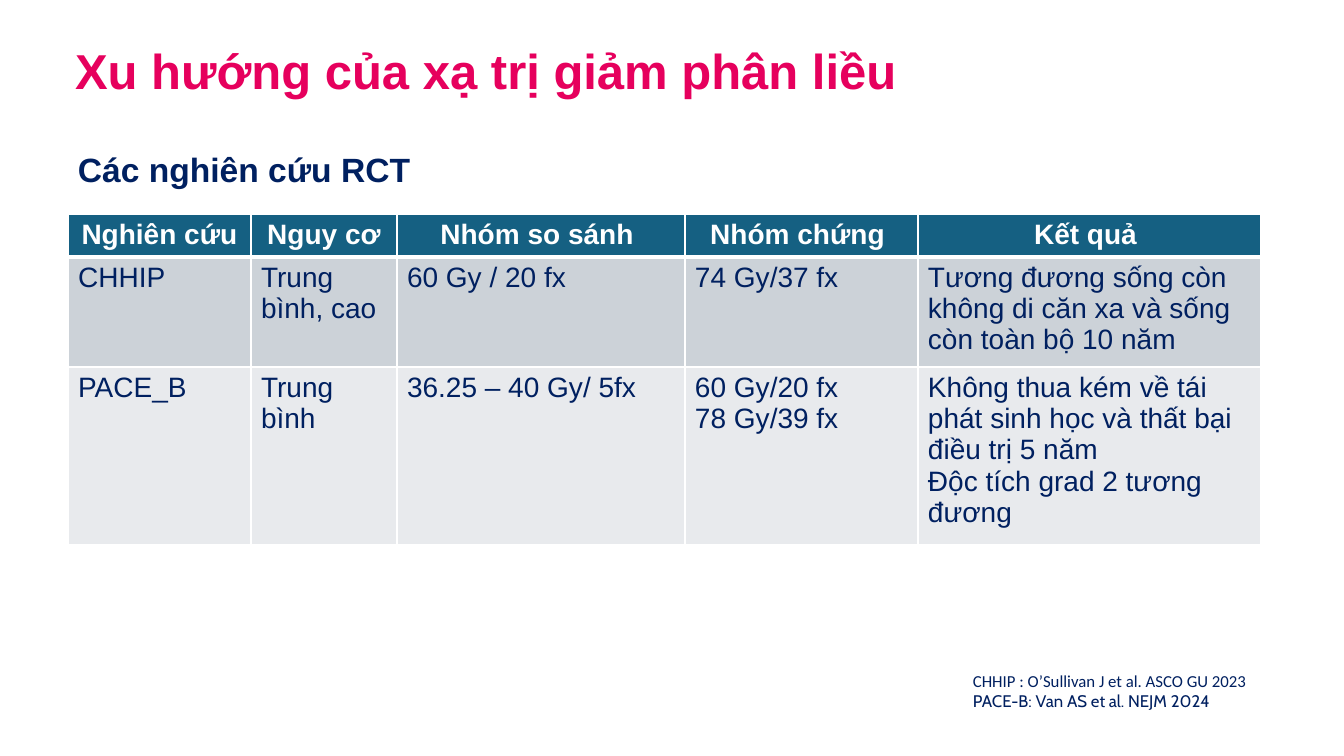
import pptx
import pptx.util
import pptx.dml.color
import pptx.enum.text
import pptx.oxml.ns
import lxml.etree

PX = 914400 / 100.8
HEX = {"pink": "E6005D", "navy": "002060", "teal": "156082",
       "gray": "CCD2D8", "pale": "E8EAED", "white": "FFFFFF"}
LEFT = pptx.enum.text.PP_ALIGN.LEFT
MID = pptx.enum.text.PP_ALIGN.CENTER
TOP = pptx.enum.text.MSO_ANCHOR.TOP

COLS = [183, 146, 288, 233, 343]
ROWS = [43, 110, 178]
FILLS = ["teal", "gray", "pale"]
CELLS = [
    [["Nghiên cứu "], ["Nguy cơ"], ["Nhóm so sánh "], ["Nhóm chứng "], ["Kết quả "]],
    [["CHHIP"], ["Trung bình, cao"], ["60 Gy / 20 fx"], ["74 Gy/37 fx"],
     ["Tương đương sống còn không di căn xa và sống còn toàn bộ 10 năm"]],
    [["PACE_B"], ["Trung bình"], ["36.25 – 40 Gy/ 5fx"],
     ["60 Gy/20 fx", "78 Gy/39 fx"],
     ["Không thua kém về tái phát sinh học và thất bại điều trị 5 năm",
      "Độc tích grad 2 tương đương"]],
]


def emu(px):
    return pptx.util.Emu(round(px * PX))


def color(name):
    return pptx.dml.color.RGBColor.from_string(HEX[name])


def add_run(para, text, size, tint, bold=False, face="Arial"):
    run = para.add_run()
    run.text = text
    font = run.font
    font.name, font.size, font.bold = face, pptx.util.Pt(size), bold
    font.color.rgb = color(tint)


def set_frame(frame):
    frame.word_wrap = True
    frame.auto_size = pptx.enum.text.MSO_AUTO_SIZE.NONE
    frame.vertical_anchor = TOP
    para = frame.paragraphs[0]
    para.alignment = LEFT
    return para


def add_title(slide, text, box):
    title = slide.shapes.title
    title.left, title.top, title.width, title.height = map(emu, box)
    para = set_frame(title.text_frame)
    para.line_spacing = 1.0
    add_run(para, text, 35, "pink", True)


def add_box(slide, box):
    shape = slide.shapes.add_textbox(*map(emu, box))
    return set_frame(shape.text_frame)


def add_edge(cell, side, width):
    props = cell._tc.get_or_add_tcPr()
    qn = pptx.oxml.ns.qn
    line = lxml.etree.SubElement(props, qn("a:ln" + side), w=str(pptx.util.Pt(width)))
    fill = lxml.etree.SubElement(line, qn("a:solidFill"))
    lxml.etree.SubElement(fill, qn("a:srgbClr"), val=HEX["white"])


def fill_cell(cell, lines, row):
    head = row == 0
    widths = {"L": 1, "R": 1, "T": 3 if row == 1 else 1, "B": 3 if head else 1}
    for side, width in widths.items():
        add_edge(cell, side, width)
    cell.fill.solid()
    cell.fill.fore_color.rgb = color(FILLS[row])
    frame = cell.text_frame
    for i, line in enumerate(lines):
        para = frame.add_paragraph() if i else frame.paragraphs[0]
        para.alignment = MID if head else LEFT
        add_run(para, line, 20, "white" if head else "navy", head)


def add_grid(slide, left, top):
    frame = slide.shapes.add_table(len(ROWS), len(COLS), emu(left), emu(top),
                                   emu(sum(COLS)), emu(sum(ROWS)))
    table = frame.table
    for col, width in zip(table.columns, COLS):
        col.width = emu(width)
    for r, height in enumerate(ROWS):
        table.rows[r].height = emu(height)
        for c, lines in enumerate(CELLS[r]):
            fill_cell(table.cell(r, c), lines, r)


def main():
    deck = pptx.Presentation()
    deck.slide_width, deck.slide_height = emu(1344), emu(756)
    slide = deck.slides.add_slide(deck.slide_layouts[5])
    add_title(slide, "Xu hướng của xạ trị giảm phân liều", (65, 35, 847, 70))
    add_grid(slide, 68, 214)
    cite = add_box(slide, (963, 666, 314, 50))
    add_run(cite, "CHHIP : O’Sullivan J et al. ASCO GU 2023 ", 12, "navy", face="Calibri")
    cite.add_line_break()
    add_run(cite, "PACE-B: Van AS et al. NEJM 2024", 12, "navy", face="Cabin")
    lead = add_box(slide, (68, 149, 1187, 60))
    lead.line_spacing = 0.9
    add_run(lead, "Các nghiên cứu RCT", 24, "navy", True)
    deck.save("out.pptx")


if __name__ == "__main__":
    main()
